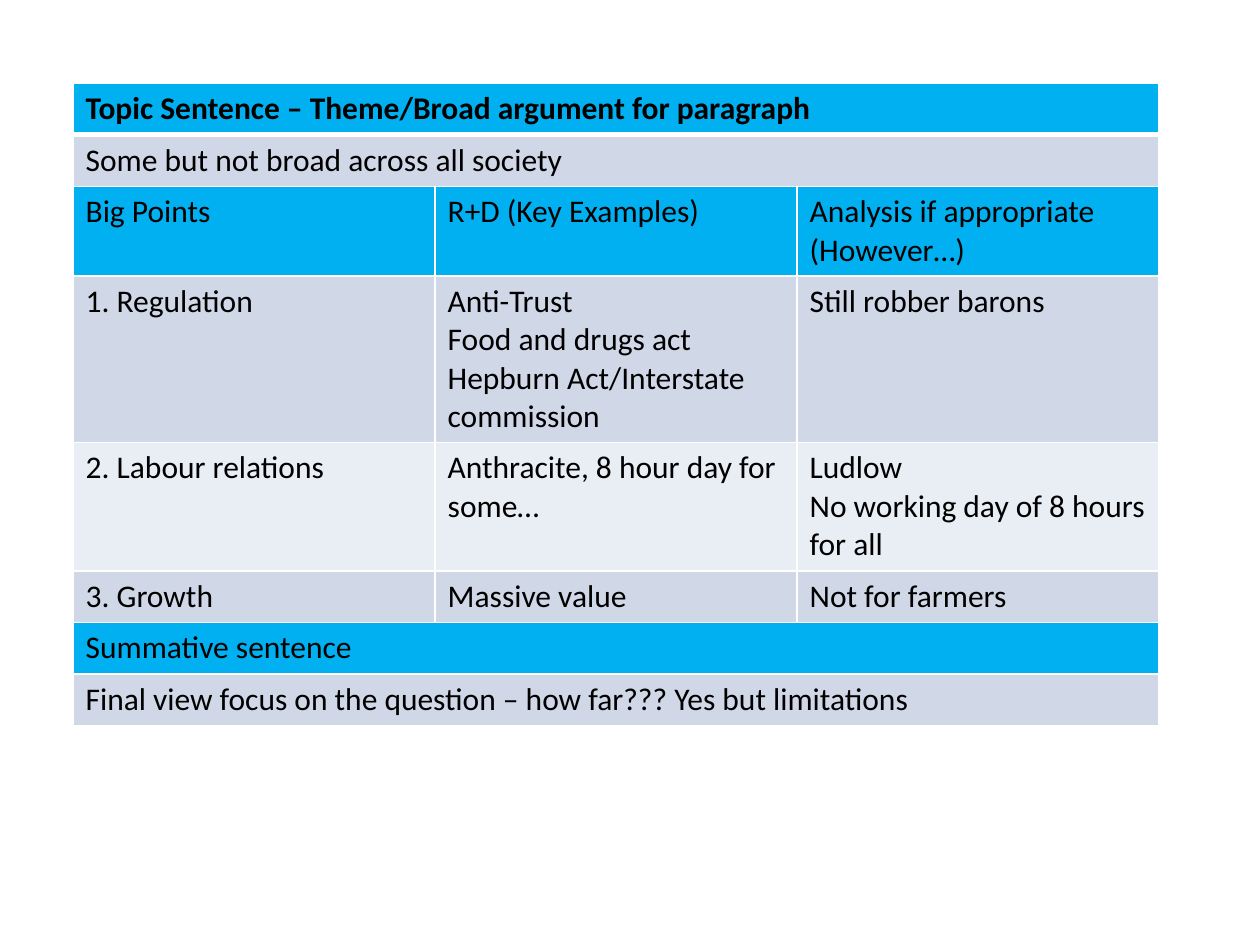
from dataclasses import dataclass

from lxml import etree
from pptx import Presentation
from pptx import util as u
from pptx.dml.color import RGBColor
from pptx.oxml import ns


@dataclass(frozen=True)
class Theme:
    font: str = "Calibri"
    size: int = 18
    ink: str = "000000"
    line: str = "FFFFFF"
    head: str = "00B0F0"
    dark: str = "D0D8E8"
    pale: str = "E9EDF4"
    thin: int = 1
    thick: int = 3


def write(frame, words, font, size, color, bold=False):
    """Fill a text frame, one paragraph for each line of words."""
    for i, line in enumerate(words.split("\n")):
        para = frame.paragraphs[0] if i == 0 else frame.add_paragraph()
        run = para.add_run()
        run.text = line
        run.font.name = font
        run.font.size = u.Pt(size)
        run.font.bold = bold
        run.font.color.rgb = RGBColor.from_string(color)


class Deck:
    def __init__(self, theme):
        self.theme = theme
        self.show = Presentation()
        self.show.slide_width = u.Inches(10)
        self.show.slide_height = u.Inches(7.5)
        self.slide = self.show.slides.add_slide(self.show.slide_layouts[6])

    def edge(self, cell, side, width):
        props = cell._tc.get_or_add_tcPr()
        line = etree.SubElement(props, ns.qn(f"a:ln{side}"), w=str(u.Pt(width)))
        fill = etree.SubElement(line, ns.qn("a:solidFill"))
        etree.SubElement(fill, ns.qn("a:srgbClr"), val=self.theme.line)

    def cell(self, cell, fill, top, base):
        """Set the borders, then the fill, as the schema orders them."""
        thin = self.theme.thin
        for side, width in zip("LRTB", (thin, thin, top, base)):
            self.edge(cell, side, width)
        cell.fill.solid()
        cell.fill.fore_color.rgb = RGBColor.from_string(fill)

    def table(self, rows, left, top, width, cols):
        """Draw rows of (height, fill, texts); a single text spans the row."""
        t = self.theme
        high = sum(row[0] for row in rows)
        grid = self.slide.shapes.add_table(
            len(rows), cols, u.Inches(left), u.Inches(top),
            u.Inches(width), u.Inches(high)).table
        grid.horz_banding = False
        for r, (tall, fill, texts) in enumerate(rows):
            grid.rows[r].height = u.Inches(tall)
            for c in range(cols):
                self.cell(grid.cell(r, c), fill,
                          t.thick if r == 1 else t.thin,
                          t.thick if r == 0 else t.thin)
            if len(texts) == 1:
                grid.cell(r, 0).merge(grid.cell(r, cols - 1))
            for c, words in enumerate(texts):
                write(grid.cell(r, c).text_frame, words, font=t.font,
                      size=t.size, color=t.ink, bold=r == 0)

    def save(self):
        self.show.save("out.pptx")


def main():
    t = Theme()
    one, two, three, four = 0.41, 0.71, 1.02, 1.32
    plan = [
        (one, t.head, ["Topic Sentence – Theme/Broad argument for paragraph"]),
        (one, t.dark, ["Some but not broad across all society"]),
        (two, t.head, ["Big Points", "R+D (Key Examples)",
                       "Analysis if appropriate (However…)"]),
        (four, t.dark, ["1. Regulation",
                        "Anti-Trust\nFood and drugs act\n"
                        "Hepburn Act/Interstate commission",
                        "Still robber barons"]),
        (three, t.pale, ["2. Labour relations",
                         "Anthracite, 8 hour day for some…",
                         "Ludlow\nNo working day of 8 hours for all"]),
        (one, t.dark, ["3. Growth", "Massive value", "Not for farmers"]),
        (one, t.head, ["Summative sentence"]),
        (one, t.dark, ["Final view focus on the question – how far??? "
                       "Yes but limitations"]),
    ]
    deck = Deck(t)
    deck.table(plan, left=0.58, top=0.66, width=8.62, cols=3)
    deck.save()


if __name__ == "__main__":
    main()
